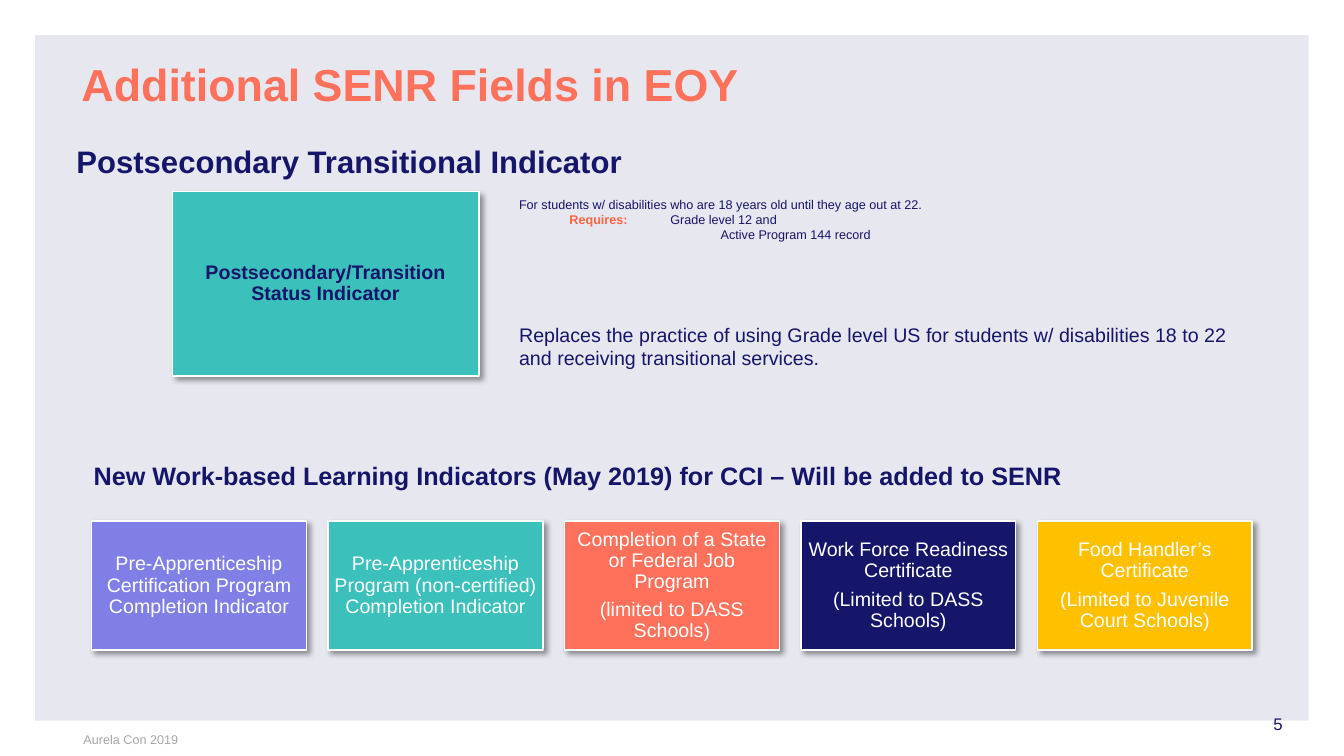
from lxml.etree import SubElement
from pptx import Presentation
from pptx.dml.color import RGBColor
from pptx.enum.shapes import MSO_SHAPE
from pptx.enum.text import MSO_ANCHOR, PP_ALIGN
from pptx.oxml.ns import qn
from pptx.util import Inches, Pt

NAVY = RGBColor(0x15, 0x15, 0x69)
CORAL = RGBColor(0xFF, 0x71, 0x5B)
ORANGE = RGBColor(0xFB, 0x65, 0x42)
TEAL = RGBColor(0x3B, 0xC0, 0xBC)
LAVENDER = RGBColor(0x7F, 0x7F, 0xE5)
GOLD = RGBColor(0xFF, 0xC0, 0x00)
PALE = RGBColor(0xE7, 0xE7, 0xF0)
GRAY = RGBColor(0xA6, 0xA6, 0xA6)
WHITE = RGBColor(0xFF, 0xFF, 0xFF)

# Single-style texts: text, box, size, colour, bold, anchor
TOP, MIDDLE = MSO_ANCHOR.TOP, MSO_ANCHOR.MIDDLE
TEXTS = [
    ("Additional SENR Fields in EOY", (0.71, 0.53, 8.44, 0.59), 32, CORAL, True, MIDDLE),
    ("Postsecondary Transitional Indicator", (0.66, 1.4, 11.69, 0.4), 22.2, NAVY, True, MIDDLE),
    ("New Work-based Learning Indicators (May 2019) for CCI – Will be added to SENR",
     (0.83, 4.52, 11.52, 0.4), 18, NAVY, True, MIDDLE),
    ("Replaces the practice of using Grade level US for students w/ disabilities 18 to 22 "
     "and receiving transitional services.", (5.05, 3.15, 7.29, 0.57), 14, NAVY, False, TOP),
    ("5", (12.53, 7.03, 0.61, 0.3), 12, NAVY, False, TOP),
    ("Aurela Con 2019", (0.73, 7.21, 3, 0.28), 9, GRAY, False, TOP),
]

# Requirement lines: left indent in inches, runs of (text, colour, bold)
REQUIREMENTS_BOX = (5.05, 1.9, 7.2, 0.56)
REQUIREMENTS = [
    (0, [("For students w/ disabilities who are 18 years old until they age out at 22.", NAVY, False)]),
    (0.5, [("Requires:", ORANGE, True), (" \tGrade level 12 and", NAVY, False)]),
    (2, [("Active Program 144 record", NAVY, False)]),
]

STATUS_CARD = (["Postsecondary/Transition Status Indicator"], TEAL)
STATUS_BOX = (1.71, 1.9, 3.04, 1.83)
INDICATOR_CARDS = [
    (["Pre-Apprenticeship Certification Program Completion Indicator"], LAVENDER),
    (["Pre-Apprenticeship Program (non-certified) Completion Indicator"], TEAL),
    (["Completion of a State or Federal Job Program", "(limited to DASS Schools)"], CORAL),
    (["Work Force Readiness Certificate", "(Limited to DASS Schools)"], NAVY),
    (["Food Handler’s Certificate", "(Limited to Juvenile Court Schools)"], GOLD),
]
CARD_LEFT, CARD_TOP, CARD_WIDTH, CARD_HEIGHT = 0.91, 5.17, 2.13, 1.28
CARD_PITCH = 2.345


def add_run(paragraph, text, size, color, bold=False):
    run = paragraph.add_run()
    run.text = text
    run.font.name = "Arial"
    run.font.size = Pt(size)
    run.font.bold = bold
    run.font.color.rgb = color


def add_text_frame(slide, box, anchor=TOP):
    frame = slide.shapes.add_textbox(*map(Inches, box)).text_frame
    frame.word_wrap = True
    frame.vertical_anchor = anchor
    return frame


def add_paragraph(frame, index):
    return frame.paragraphs[0] if index == 0 else frame.add_paragraph()


def add_rectangle(slide, box, color):
    shape = slide.shapes.add_shape(MSO_SHAPE.RECTANGLE, *map(Inches, box))
    shape.fill.solid()
    shape.fill.fore_color.rgb = color
    shape.line.fill.background()
    shape.shadow.inherit = False
    return shape


def add_soft_shadow(shape):
    """Give the shape a black 40% shadow falling to the lower right."""
    effects = shape._element.spPr.find(qn("a:effectLst"))
    shadow = SubElement(effects, qn("a:outerShdw"), blurRad=str(Pt(4)), dist=str(Pt(3)),
                        dir=str(45 * 60000), algn="tl", rotWithShape="0")
    black = SubElement(shadow, qn("a:srgbClr"), val="000000")
    SubElement(black, qn("a:alpha"), val="40000")


def add_card(slide, box, lines, fill, text_color=WHITE, bold=False):
    card = add_rectangle(slide, box, fill)
    card.line.color.rgb = WHITE
    card.line.width = Pt(1)
    add_soft_shadow(card)
    frame = card.text_frame
    frame.word_wrap = True
    frame.vertical_anchor = MIDDLE
    frame.margin_left = frame.margin_right = Inches(0.06)
    frame.margin_top = frame.margin_bottom = Inches(0.06)
    for index, line in enumerate(lines):
        paragraph = add_paragraph(frame, index)
        paragraph.alignment = PP_ALIGN.CENTER
        paragraph.line_spacing = 0.9
        if index:
            paragraph.space_before = Pt(5)
        add_run(paragraph, line, 14, text_color, bold)


def add_requirements(slide):
    frame = add_text_frame(slide, REQUIREMENTS_BOX)
    for index, (indent, runs) in enumerate(REQUIREMENTS):
        paragraph = add_paragraph(frame, index)
        properties = paragraph._p.get_or_add_pPr()
        properties.set("marL", str(Inches(indent)))
        properties.set("indent", "0")
        for text, color, bold in runs:
            add_run(paragraph, text, 9, color, bold)


def main():
    presentation = Presentation()
    presentation.slide_width = Inches(13.33)
    presentation.slide_height = Inches(7.5)
    slide = presentation.slides.add_slide(presentation.slide_layouts[6])

    add_rectangle(slide, (0.35, 0.35, 12.63, 6.8), PALE)
    for text, box, size, color, bold, anchor in TEXTS:
        paragraph = add_text_frame(slide, box, anchor).paragraphs[0]
        add_run(paragraph, text, size, color, bold)
    add_requirements(slide)

    add_card(slide, STATUS_BOX, *STATUS_CARD, text_color=NAVY, bold=True)
    for column, (lines, fill) in enumerate(INDICATOR_CARDS):
        left = CARD_LEFT + column * CARD_PITCH
        add_card(slide, (left, CARD_TOP, CARD_WIDTH, CARD_HEIGHT), lines, fill)

    presentation.save("out.pptx")


if __name__ == "__main__":
    main()
